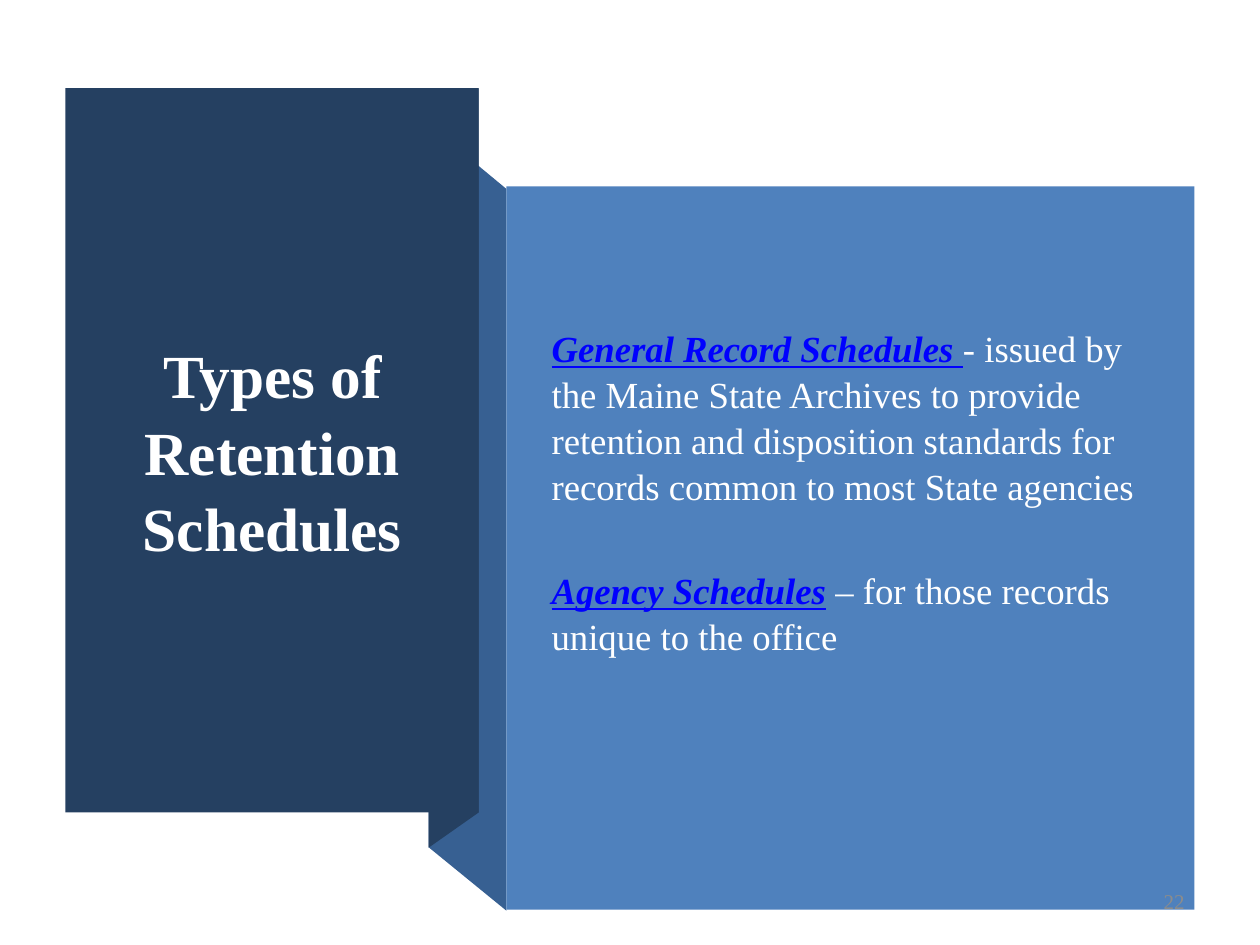
from pptx import Presentation
from pptx.dml.color import RGBColor
from pptx.enum.shapes import MSO_SHAPE as Shape
from pptx.enum.text import MSO_ANCHOR as Anchor, MSO_AUTO_SIZE as Auto, PP_ALIGN as Align
from pptx.util import Cm, Pt

TITLE_ONLY = 5
NAVY, STEEL, BLUE = "254061", "376092", "4F81BD"
LINK, WHITE, GREY = "0000FF", "FFFFFF", "8C8C8C"


def paint(color, value):
    color.rgb = RGBColor.from_string(value)


class Page:
    """Holds the text style and the current slide; lengths are in cm."""
    face = "Times New Roman"
    leading = 1.04

    def __init__(self, slide):
        self.slide = slide
        self.shapes = slide.shapes

    def finish(self, shape, fill):
        shape.shadow.inherit = False
        shape.fill.solid()
        paint(shape.fill.fore_color, fill)
        shape.line.fill.background()

    def rect(self, box, fill):
        self.finish(self.shapes.add_shape(Shape.RECTANGLE, *map(Cm, box)), fill)

    def poly(self, points, fill):
        start, *rest = [(Cm(x), Cm(y)) for x, y in points]
        pen = self.shapes.build_freeform(*start)
        pen.add_line_segments(rest, close=True)
        self.finish(pen.convert_to_shape(), fill)

    def frame(self, shape):
        frame = shape.text_frame
        frame.word_wrap = True
        frame.auto_size = Auto.NONE
        frame.vertical_anchor = Anchor.MIDDLE
        return frame

    def style(self, para, size, color, align=Align.LEFT, bold=False):
        para.alignment = align
        para.line_spacing = self.leading
        para.font.name = self.face
        para.font.size = Pt(size)
        para.font.bold = bold
        paint(para.font.color, color)

    def title(self, text, box):
        shape = self.shapes.title
        shape.left, shape.top, shape.width, shape.height = map(Cm, box)
        frame = self.frame(shape)
        frame.text = text
        self.style(frame.paragraphs[0], 35, WHITE, Align.CENTER, bold=True)
        # Bring the title in front of the panel drawn before it
        shape._element.getparent().append(shape._element)

    def terms(self, items, box, gap, foot):
        """Write one paragraph per (term, joint, meaning); the joint is a bold space."""
        frame = self.frame(self.shapes.add_textbox(*map(Cm, box)))
        frame.margin_bottom = Cm(foot)
        for i, (term, lined, meaning) in enumerate(items):
            para = frame.add_paragraph() if i else frame.paragraphs[0]
            self.style(para, 21, WHITE)
            if i:
                para.space_before = Pt(gap)
            for text, italic, line in ((term, True, True), (" ", False, lined)):
                run = para.add_run()
                run.text = text
                run.font.bold = True
                run.font.italic = italic
                run.font.underline = line
                paint(run.font.color, LINK if line else WHITE)
            para.add_run().text = meaning

    def number(self, text, box):
        frame = self.frame(self.shapes.add_textbox(*map(Cm, box)))
        frame.text = text
        self.style(frame.paragraphs[0], 12, GREY, Align.RIGHT)


def main():
    deck = Presentation()
    deck.slide_width, deck.slide_height = Cm(25.4), Cm(19.05)
    page = Page(deck.slides.add_slide(deck.slide_layouts[TITLE_ONLY]))

    left, fold, edge, hinge = 1.32, 8.64, 9.65, 10.21
    top, base = 1.78, 16.38
    page.poly([(hinge, 18.36), (fold, 17.08), (fold, 2.51), (hinge, 3.81)], STEEL)
    page.poly([(edge, base), (fold, 17.09), (fold, 2.49), (edge, top)], NAVY)
    page.rect((left, top, edge - left, base - top), NAVY)
    page.title("Types of Retention Schedules", (1.96, 2.72, 7.06, 12.67))

    page.rect((hinge, 3.76, 13.87, 14.58), BLUE)
    page.terms([
        ("General Record Schedules", True,
         "- issued by the Maine State Archives to provide retention and "
         "disposition standards for records common to most State agencies"),
        ("Agency Schedules", False, "– for those records unique to the office"),
    ], (10.87, 4.78, 12.4, 12.04), gap=33.5, foot=1.93)
    page.number("22", (18.21, 17.65, 5.92, 1.02))
    deck.save("out.pptx")


if __name__ == "__main__":
    main()
